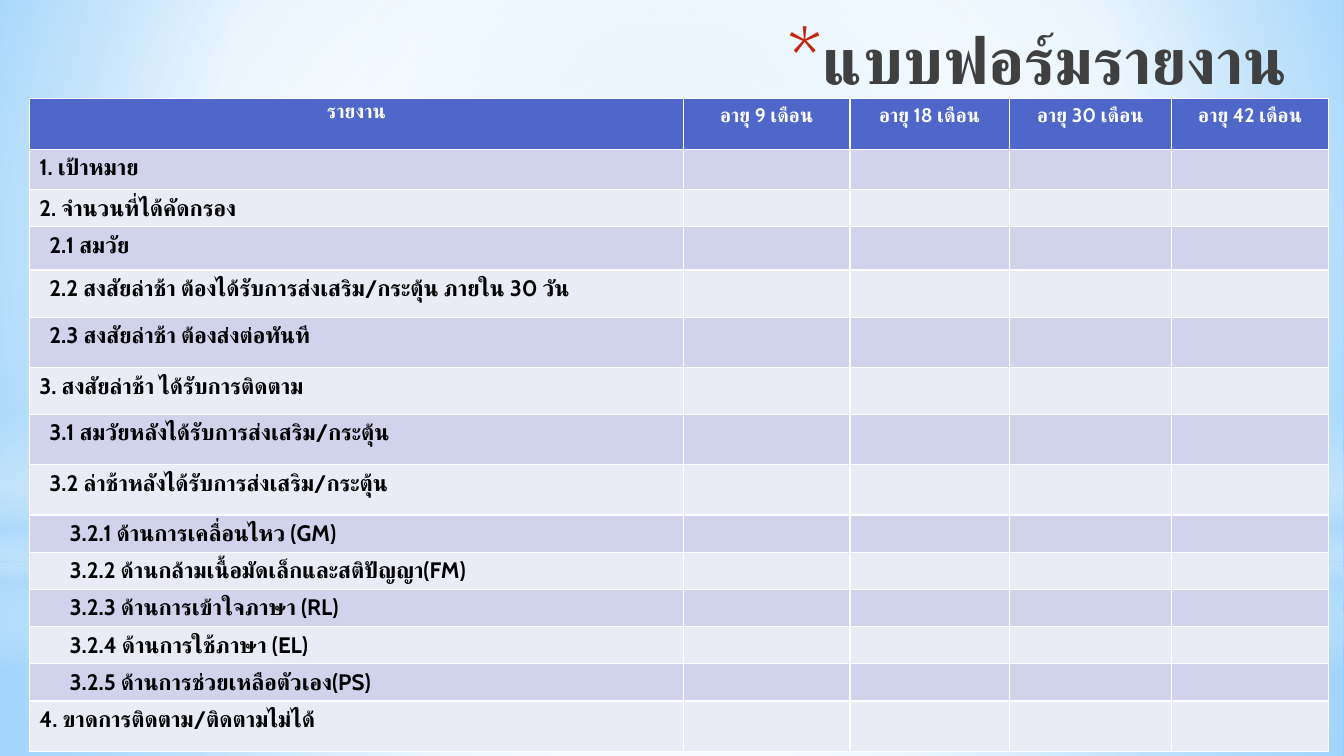
from lxml import etree
from pptx import Presentation
from pptx.dml.color import RGBColor
from pptx.enum.shapes import MSO_SHAPE
from pptx.enum.text import MSO_ANCHOR, PP_ALIGN
from pptx.oxml.ns import qn
from pptx.util import Inches, Pt

RECT, OVAL = MSO_SHAPE.RECTANGLE, MSO_SHAPE.OVAL
TOP = MSO_ANCHOR.TOP
LEFT, CENTER, RIGHT = PP_ALIGN.LEFT, PP_ALIGN.CENTER, PP_ALIGN.RIGHT
FONT = "Cabin"
WHITE = RGBColor(0xFF, 0xFF, 0xFF)
BLACK = RGBColor(0, 0, 0)
GRAY = RGBColor(0x40, 0x40, 0x40)
RED = RGBColor(0xC3, 0x26, 0x0C)
BLUE = RGBColor(0x4E, 0x67, 0xC8)
DARK = RGBColor(0xD0, 0xD3, 0xEB)
PALE = RGBColor(0xE9, 0xEB, 0xF5)
SKY = RGBColor(0xB4, 0xDC, 0xFA)
LIGHT = RGBColor(0x9E, 0xD5, 0xFF)
DEEP = RGBColor(0x5B, 0xB9, 0xFF)

MID = (50, 50, 50, 50)
GLOWS = [
    (RECT, 5.58, 1.92, [(0, WHITE, 91), (37, WHITE, 76), (100, SKY, 79)], MID),
    (RECT, 0, 5.58, [(0, WHITE, 89), (48, WHITE, 62), (100, SKY, 79)], MID),
    (RECT, 4.12, 2.5, [(0, WHITE, 0), (29, WHITE, 30), (45, SKY, 40),
                       (55, WHITE, 26), (65, SKY, 60), (100, WHITE, 0)], None),
    (OVAL, 1.75, 5.58, [(0, WHITE, 100), (56, WHITE, 0)], MID),
]
HEADS = ["รายงาน"] + [f"อายุ {age} เดือน" for age in (9, 18, 30, 42)]
WIDTHS = [6.49, 1.65, 1.58, 1.61, 1.56]
HEAD_H = 0.5
ROWS = [
    (0, 0.4, "1. เป้าหมาย"),
    (0, 0.35, "2. จำนวนที่ได้คัดกรอง"),
    (0.1, 0.43, "2.1 สมวัย"),
    (0.1, 0.47, "2.2 สงสัยล่าช้า ต้องได้รับการส่งเสริม/กระตุ้น ภายใน 30 วัน"),
    (0.1, 0.5, "2.3 สงสัยล่าช้า ต้องส่งต่อทันที"),
    (0, 0.46, "3. สงสัยล่าช้า ได้รับการติดตาม"),
    (0.1, 0.5, "3.1 สมวัยหลังได้รับการส่งเสริม/กระตุ้น"),
    (0.1, 0.5, "3.2 ล่าช้าหลังได้รับการส่งเสริม/กระตุ้น"),
    (0.3, 0.36, "3.2.1 ด้านการเคลื่อนไหว (GM)"),
    (0.3, 0.36, "3.2.2 ด้านกล้ามเนื้อมัดเล็กและสติปัญญา(FM)"),
    (0.3, 0.35, "3.2.3 ด้านการเข้าใจภาษา (RL)"),
    (0.3, 0.35, "3.2.4 ด้านการใช้ภาษา (EL)"),
    (0.3, 0.37, "3.2.5 ด้านการช่วยเหลือตัวเอง(PS)"),
    (0, 0.5, "4. ขาดการติดตาม/ติดตามไม่ได้"),
]


def add(node, tag, **attrs):
    """Append a child with the given attributes."""
    kid = etree.SubElement(node, qn(tag))
    for key, val in attrs.items():
        kid.set(key, str(val))
    return kid


def blend(fill, root, stops, focus):
    """Fill with a round gradient, or a vertical one without a focus."""
    fill.gradient()
    grad = next(root.iter(qn("a:gradFill")))
    for kid in list(grad):
        grad.remove(kid)
    items = add(grad, "a:gsLst")
    for pos, color, alpha in stops:
        stop = add(items, "a:gs", pos=pos * 1000)
        tone = add(stop, "a:srgbClr", val=color)
        add(tone, "a:alpha", val=alpha * 1000)
    if focus:
        shade = add(grad, "a:path", path="circle")
        sides = {side: part * 1000 for side, part in zip("ltrb", focus)}
        add(shade, "a:fillToRect", **sides)
    else:
        add(grad, "a:lin", ang=90 * 60000, scaled=0)


def add_glow(slide, kind, top, height, stops, focus):
    """Add a full-width soft light."""
    glow = slide.shapes.add_shape(
        kind, 0, Inches(top), Inches(13.33), Inches(height))
    glow.shadow.inherit = False
    glow.line.fill.background()
    blend(glow.fill, glow.element, stops, focus)


def style(para, size, color, align):
    """Set the bold font of a paragraph for Latin and Thai text."""
    para.alignment = align
    font = para.font
    font.name, font.size, font.bold = FONT, Pt(size), True
    font.color.rgb = color
    props = para._p.get_or_add_pPr().find(qn("a:defRPr"))
    add(props, "a:cs", typeface=FONT)


def set_title(slide):
    """Place the title with its star bullet."""
    title = slide.shapes.title
    title.left, title.top = Inches(3.36), Inches(0.15)
    title.width, title.height = Inches(9.5), Inches(1.25)
    frame = title.text_frame
    frame.text = "แบบฟอร์มรายงาน"
    frame.vertical_anchor = TOP
    para = frame.paragraphs[0]
    props = para._p.get_or_add_pPr()
    props.set("marL", str(Inches(0.35)))
    props.set("indent", str(-Inches(0.35)))
    add(add(props, "a:buClr"), "a:srgbClr", val=RED)
    add(props, "a:buSzPct", val=128000)
    add(props, "a:buFont", typeface=FONT)
    add(props, "a:buChar", char="*")
    style(para, 46, GRAY, RIGHT)
    title.element.getparent().append(title.element)


def set_cell(cell, text, fill, size, color, align, indent=0):
    """Write and colour one cell."""
    cell.text = text
    cell.fill.solid()
    cell.fill.fore_color.rgb = fill
    cell.margin_left = Inches(0.1 + indent)
    style(cell.text_frame.paragraphs[0], size, color, align)


def add_form(slide):
    """Add the report table."""
    heights = [HEAD_H] + [height for _, height, _ in ROWS]
    table = slide.shapes.add_table(
        len(heights), len(WIDTHS), Inches(0.29), Inches(0.98),
        Inches(sum(WIDTHS)), Inches(sum(heights))).table
    for col, width in zip(table.columns, WIDTHS):
        col.width = Inches(width)
    for row, height in zip(table.rows, heights):
        row.height = Inches(height)
    for col, head in enumerate(HEADS):
        set_cell(table.cell(0, col), head, BLUE, 14, WHITE, CENTER)
    table.cell(0, 0).margin_top = Inches(0.01)
    for num, (indent, _, label) in enumerate(ROWS, 1):
        fill = DARK if num % 2 else PALE
        for col in range(len(WIDTHS)):
            text = "" if col else label
            set_cell(table.cell(num, col), text, fill, 16, BLACK, LEFT,
                     0 if col else indent)


def main():
    """Build and save the slide."""
    deck = Presentation()
    deck.slide_width, deck.slide_height = Inches(13.33), Inches(7.5)
    slide = deck.slides.add_slide(deck.slide_layouts[5])
    blend(slide.background.fill, slide.element,
          [(0, LIGHT, 100), (60, WHITE, 100), (100, DEEP, 100)],
          (20, 10, 20, 60))
    for glow in GLOWS:
        add_glow(slide, *glow)
    set_title(slide)
    add_form(slide)
    deck.save("out.pptx")


if __name__ == "__main__":
    main()
